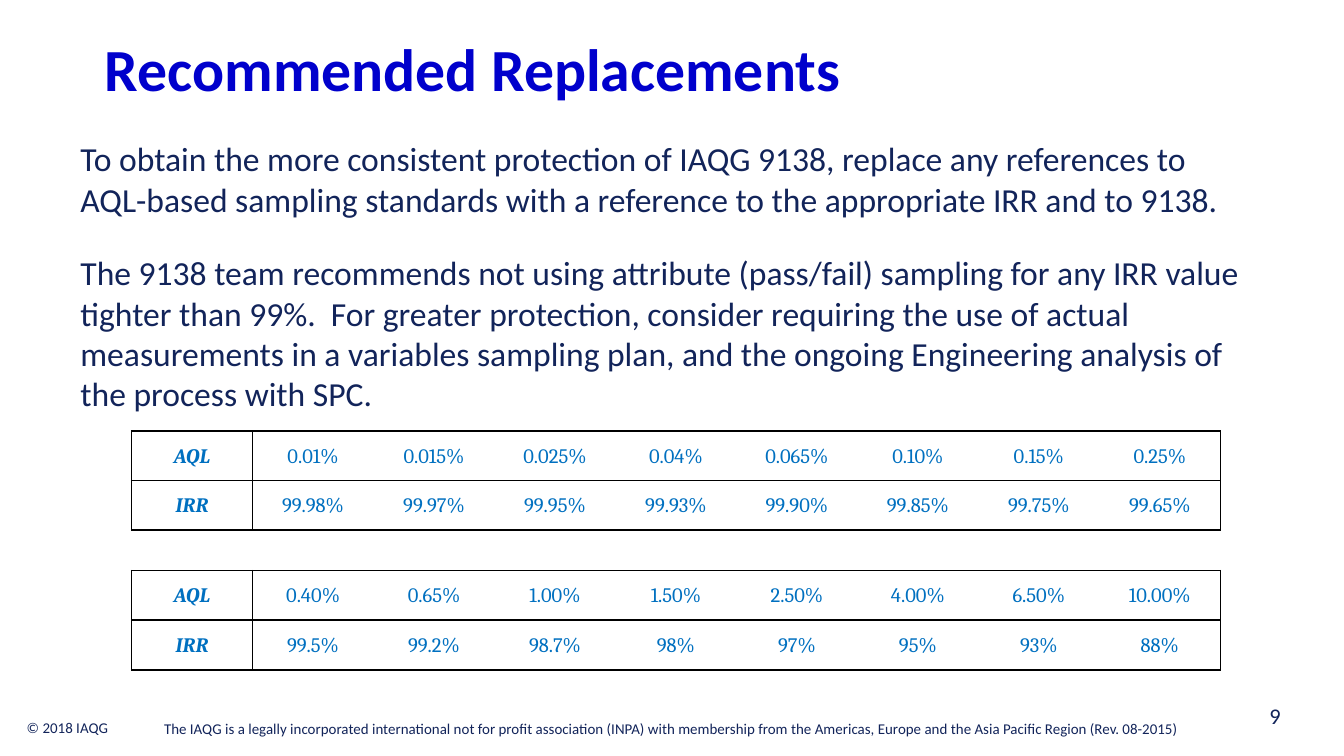
import dataclasses

import lxml.etree
import pptx
import pptx.dml.color
import pptx.enum.text
import pptx.oxml.ns
import pptx.util

SLIDE_WIDTH = 10
SLIDE_HEIGHT = SLIDE_WIDTH * 9 / 16
ALIGN = pptx.enum.text.PP_ALIGN
ANCHOR = pptx.enum.text.MSO_ANCHOR
THIN_INSETS = (0.08, 0.04, 0.08, 0.04)
BODY_INSETS = (0.1, 0.05, 0.1, 0.05)
CELL_INSETS = (0.01, 0.01, 0.01, 0)
LABELS = ("AQL", "IRR")
ROW_HEIGHTS = (0.37, 0.37, 0.3, 0.37, 0.37, 0.35)
COLUMN_WIDTH = 0.9
RATES = {
    0: ("0.01%", "0.015%", "0.025%", "0.04%", "0.065%", "0.10%", "0.15%", "0.25%"),
    1: ("99.98%", "99.97%", "99.95%", "99.93%", "99.90%", "99.85%", "99.75%", "99.65%"),
    3: ("0.40%", "0.65%", "1.00%", "1.50%", "2.50%", "4.00%", "6.50%", "10.00%"),
    4: ("99.5%", "99.2%", "98.7%", "98%", "97%", "95%", "93%", "88%"),
}
ADVICE = (
    "To obtain the more consistent protection of IAQG 9138, replace any references to "
    "AQL-based sampling standards with a reference to the appropriate IRR and to 9138.",
    "The 9138 team recommends not using attribute (pass/fail) sampling for any IRR value "
    "tighter than 99%.  For greater protection, consider requiring the use of actual "
    "measurements in a variables sampling plan, and the ongoing Engineering analysis of "
    "the process with SPC.",
)
MEMBERSHIP = (
    "The IAQG is a legally incorporated international not for profit association (INPA) "
    "with membership from the Americas, Europe and the Asia Pacific Region (Rev. 08-2015)"
)


@dataclasses.dataclass(frozen=True)
class Theme:
    navy: str = "12245A"
    title_blue: str = "0000CC"
    table_blue: str = "0070C0"
    rule: str = "000000"
    rule_width: float = 1
    text_font: str = "Calibri"
    table_font: str = "Cambria"
    title_size: int = 32
    body_size: int = 18
    page_size: int = 12
    table_size: int = 11
    footer_size: int = 8


THEME = Theme()


def across(share):
    return pptx.util.Inches(share * SLIDE_WIDTH)


def down(share):
    return pptx.util.Inches(share * SLIDE_HEIGHT)


def add_run(paragraph, wording, size, color, font=THEME.text_font, bold=False, italic=False):
    run = paragraph.add_run()
    run.text = wording
    run.font.name = font
    run.font.size = pptx.util.Pt(size)
    run.font.bold = bold
    run.font.italic = italic
    run.font.color.rgb = pptx.dml.color.RGBColor.from_string(color)


def add_text(slide, area, paragraphs, size, color=THEME.navy, bold=False,
             align=ALIGN.LEFT, anchor=ANCHOR.TOP, insets=THIN_INSETS, gap=0):
    left, top, width, height = area
    frame = slide.shapes.add_textbox(
        across(left), down(top), across(width), down(height)).text_frame
    frame.word_wrap = True
    frame.vertical_anchor = anchor
    (frame.margin_left, frame.margin_top,
     frame.margin_right, frame.margin_bottom) = map(pptx.util.Inches, insets)
    for index, wording in enumerate(paragraphs):
        paragraph = frame.add_paragraph() if index else frame.paragraphs[0]
        paragraph.alignment = align
        if index:
            paragraph.space_before = pptx.util.Pt(gap)
        add_run(paragraph, wording, size, color, bold=bold)


def ruled_sides(row, column):
    if row not in RATES:
        return {"T", "B"} if row + 1 in RATES else {"T"}
    sides = {"T", "B"}
    if column in (0, 1):
        sides.add("L")
    if column in (0, len(RATES[row])):
        sides.add("R")
    return sides


def rule_cell(cell, sides):
    qn = pptx.oxml.ns.qn
    properties = cell._tc.get_or_add_tcPr()
    for side in "LRTB":
        line = lxml.etree.SubElement(properties, qn(f"a:ln{side}"))
        if side in sides:
            line.set("w", str(pptx.util.Pt(THEME.rule_width)))
            fill = lxml.etree.SubElement(line, qn("a:solidFill"))
            lxml.etree.SubElement(fill, qn("a:srgbClr")).set("val", THEME.rule)
        else:
            lxml.etree.SubElement(line, qn("a:noFill"))
    cell.fill.background()


def fill_cell(cell, wording, heading):
    cell.vertical_anchor = ANCHOR.MIDDLE
    (cell.margin_left, cell.margin_top,
     cell.margin_right, cell.margin_bottom) = map(pptx.util.Inches, CELL_INSETS)
    paragraph = cell.text_frame.paragraphs[0]
    paragraph.alignment = ALIGN.CENTER
    if wording:
        add_run(paragraph, wording, THEME.table_size, THEME.table_blue,
                THEME.table_font, heading, heading)
    else:
        ending = lxml.etree.SubElement(paragraph._p, pptx.oxml.ns.qn("a:endParaRPr"))
        ending.set("sz", str(THEME.table_size * 100))


def add_rate_table(slide, left, top):
    column_count = len(RATES[0]) + 1
    table = slide.shapes.add_table(
        len(ROW_HEIGHTS), column_count, across(left), down(top),
        pptx.util.Inches(COLUMN_WIDTH * column_count),
        pptx.util.Inches(sum(ROW_HEIGHTS))).table
    table.first_row = False
    table.horz_banding = False
    for column in table.columns:
        column.width = pptx.util.Inches(COLUMN_WIDTH)
    for row, height in enumerate(ROW_HEIGHTS):
        table.rows[row].height = pptx.util.Inches(height)
        label = LABELS[row % 3] if row in RATES else ""
        wordings = (label, *RATES.get(row, [""] * (column_count - 1)))
        for column, wording in enumerate(wordings):
            cell = table.cell(row, column)
            rule_cell(cell, ruled_sides(row, column))
            fill_cell(cell, wording, column == 0)


def main():
    deck = pptx.Presentation()
    deck.slide_width, deck.slide_height = across(1), down(1)
    slide = deck.slides.add_slide(deck.slide_layouts[6])

    add_text(slide, (0, 0.948, 1, 0.032), [MEMBERSHIP], THEME.footer_size,
             align=ALIGN.CENTER, anchor=ANCHOR.MIDDLE)
    add_text(slide, (0.01, 0.942, 0.152, 0.043), ["© 2018 IAQG"], THEME.footer_size,
             insets=BODY_INSETS)
    add_rate_table(slide, 0.098, 0.57)
    add_text(slide, (0.05, 0.174, 0.892, 0.386), ADVICE, THEME.body_size,
             insets=BODY_INSETS, gap=THEME.body_size)
    add_text(slide, (0.07, 0.035, 0.863, 0.117), ["Recommended Replacements"],
             THEME.title_size, THEME.title_blue, bold=True)
    add_text(slide, (0.728, 0.921, 0.233, 0.053), ["9"], THEME.page_size,
             align=ALIGN.RIGHT)
    deck.save("out.pptx")


if __name__ == "__main__":
    main()
